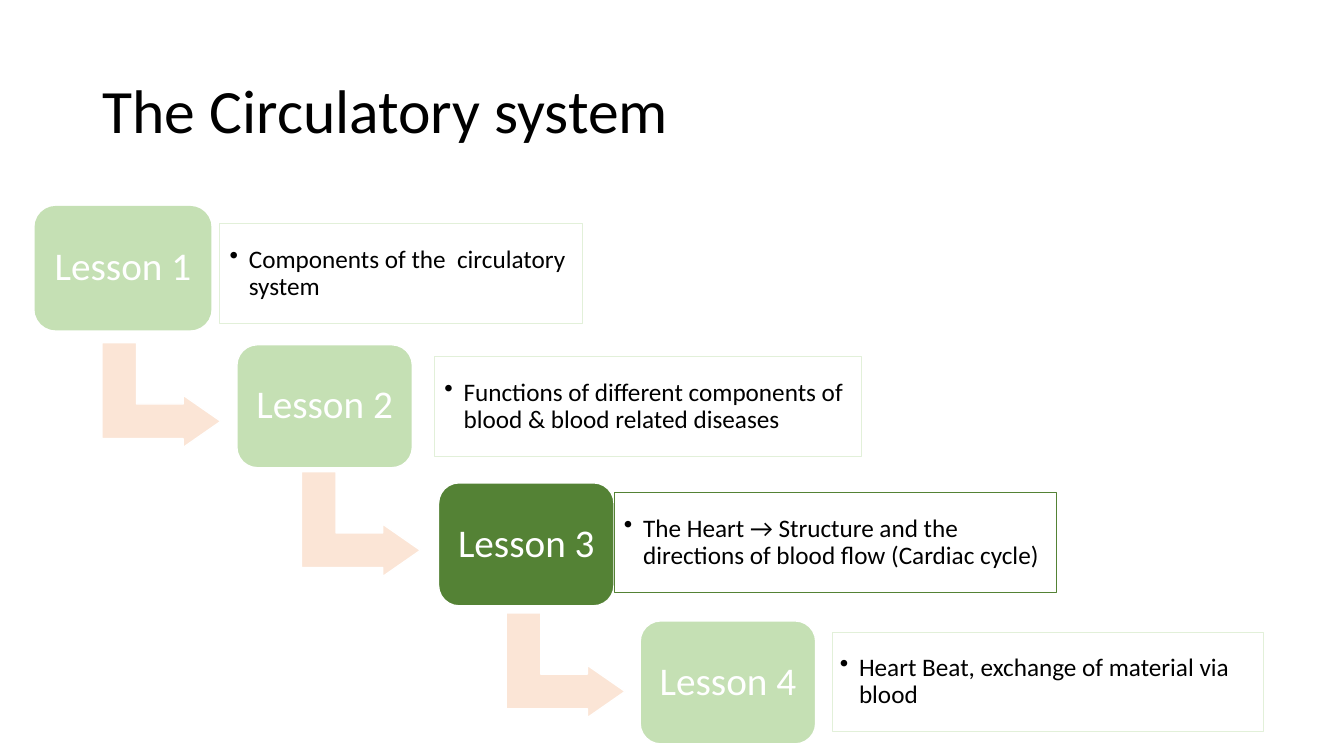
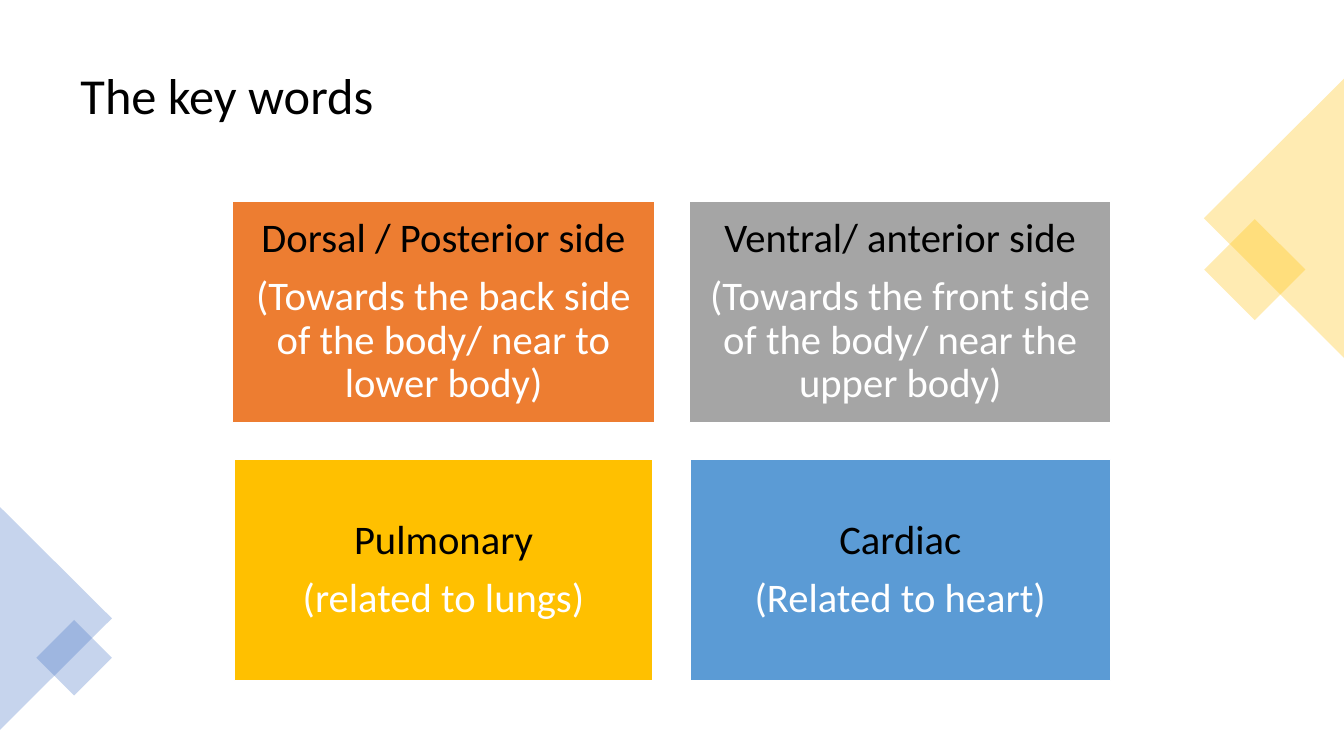
"""Build two slides on the circulatory system: a lesson staircase and key words."""
from lxml import etree
from pptx import Presentation
from pptx.dml.color import RGBColor
from pptx.enum.shapes import MSO_SHAPE
from pptx.enum.text import MSO_ANCHOR, PP_ALIGN
from pptx.oxml.ns import qn
from pptx.util import Inches, Pt

RECT, ROUND = MSO_SHAPE.RECTANGLE, MSO_SHAPE.ROUNDED_RECTANGLE
BENT, TRI = MSO_SHAPE.BENT_UP_ARROW, MSO_SHAPE.ISOSCELES_TRIANGLE
MIDDLE = MSO_ANCHOR.MIDDLE
LEFT, CENTER = PP_ALIGN.LEFT, PP_ALIGN.CENTER
FONT = "Calibri"
COLORS = {
    "black": "000000", "white": "FFFFFF", "leaf": "C5E0B4", "mist": "E2F0D9",
    "forest": "548235", "peach": "FBE5D6", "orange": "ED7D31",
    "gray": "A5A5A5", "gold": "FFC000", "sky": "5B9BD5", "blue": "4472C4",
}

TITLES = [
    ("The Circulatory system", 44, (0.92, 0.4, 11.5, 1.45)),
    ("The key words", 36, (0.7, 0.35, 11.93, 1.24)),
]
LESSONS = [
    ("Lesson 1", "leaf", "leaf", "Components of the  circulatory system",
     "mist", (2.18, 2.22, 3.6), 0.1),
    ("Lesson 2", "leaf", "white",
     "Functions of different components of blood & blood related diseases",
     "mist", (4.31, 3.54, 4.24), 0.1),
    ("Lesson 3", "forest", "white",
     "The Heart → Structure and the directions of blood flow (Cardiac cycle)",
     "forest", (6.09, 4.89, 4.39), 0.1),
    ("Lesson 4", "leaf", "white", "Heart Beat, exchange of material via blood",
     "mist", (8.26, 6.27, 4.27), 0.07),
]
ARROWS = [(1.08, 3.33), (3.06, 4.61), (5.09, 6.01)]
WORDS = [
    ("Dorsal / Posterior side",
     "(Towards the back side of the body/ near to lower body)", "orange", 4.19),
    ("Ventral/ anterior side",
     "(Towards the front side of the body/ near the upper body)", "gray", 4.18),
    ("Pulmonary", "(related to lungs)", "gold", 4.15),
    ("Cardiac", "(Related to heart)", "sky", 4.17),
]
CORNERS = [
    (RECT, (12.09, 2.32, 0.71, 0.71), 45, "gold"),
    (TRI, (11.25, 1.47, 2.77, 1.39), 270, "gold"),
    (TRI, (-0.55, 5.58, 2.21, 1.11), 90, "blue"),
    (RECT, (0.47, 6.26, 0.53, 0.53), 45, "blue"),
]


def rgb(name):
    return RGBColor.from_string(COLORS[name])


def add_box(slide, kind, box, fill=None, line=None, width=1, turn=0):
    shape = slide.shapes.add_shape(kind, *map(Inches, box))
    shape.shadow.inherit = False
    shape.rotation = turn
    if fill:
        shape.fill.solid()
        shape.fill.fore_color.rgb = rgb(fill)
    else:
        shape.fill.background()
    if line:
        shape.line.color.rgb = rgb(line)
        shape.line.width = Pt(width)
    else:
        shape.line.fill.background()
    return shape


def put_text(shape, parts, size, align=CENTER, inset=0.1, gap=0):
    frame = shape.text_frame
    frame.word_wrap = True
    frame.vertical_anchor = MIDDLE
    frame.margin_left = frame.margin_right = Inches(inset)
    frame.margin_top = frame.margin_bottom = Inches(inset)
    frame.text = "\n".join(text for text, _ in parts)
    for para, (_, color) in zip(frame.paragraphs, parts):
        para.alignment = align
        para.line_spacing = 0.9
        para.space_after = Pt(gap)
        font = para.runs[0].font
        font.name, font.size = FONT, Pt(size)
        font.color.rgb = rgb(color)


def add_bullet(shape):
    for para in shape.text_frame.paragraphs:
        props = para._p.get_or_add_pPr()
        props.set("marL", str(Inches(0.19)))
        props.set("indent", str(-Inches(0.19)))
        etree.SubElement(props, qn("a:buChar")).set("char", "•")


def fade(shape, percent):
    color = shape.element.xpath("./p:spPr/a:solidFill/a:srgbClr")[0]
    etree.SubElement(color, qn("a:alpha")).set("val", str(percent * 1000))


def add_slide(deck, title):
    text, size, box = title
    slide = deck.slides.add_slide(deck.slide_layouts[6])
    head = slide.shapes.add_textbox(*map(Inches, box))
    put_text(head, [(text, "black")], size, LEFT)
    return slide


def draw_stairs(slide):
    for left, top in ARROWS:
        arrow = add_box(slide, BENT, (left, top, 1.04, 1.18), "peach", "white", turn=90)
        for i, value in enumerate((0.33, 0.25, 0.36)):
            arrow.adjustments[i] = value
    for i, (name, fill, edge, topic, frame, spot, inset) in enumerate(LESSONS):
        step = add_box(slide, ROUND, (0.35 + 2 * i, 2.05 + 1.37 * i, 1.74, 1.22), fill, edge)
        put_text(step, [(name, "white")], 28, inset=0.05)
        note = add_box(slide, RECT, (*spot, 0.99), line=frame, width=0.75)
        put_text(note, [(topic, "black")], 18, LEFT, inset)
        add_bullet(note)


def draw_words(slide):
    for kind, box, turn, color in CORNERS:
        fade(add_box(slide, kind, box, color, turn=turn), 30)
    for i, (term, gloss, color, width) in enumerate(WORDS):
        row, col = divmod(i, 2)
        left = 4.4 + 4.53 * col - width / 2
        card = add_box(slide, RECT, (left, 2 + 2.56 * row, width, 2.19), color, "white")
        put_text(card, [(term, "black"), (gloss, "white")], 29, inset=0.12, gap=10)


def main():
    deck = Presentation()
    deck.slide_width, deck.slide_height = Inches(13.33), Inches(7.5)
    for title, draw in zip(TITLES, (draw_stairs, draw_words)):
        draw(add_slide(deck, title))
    deck.save("out.pptx")


if __name__ == "__main__":
    main()
